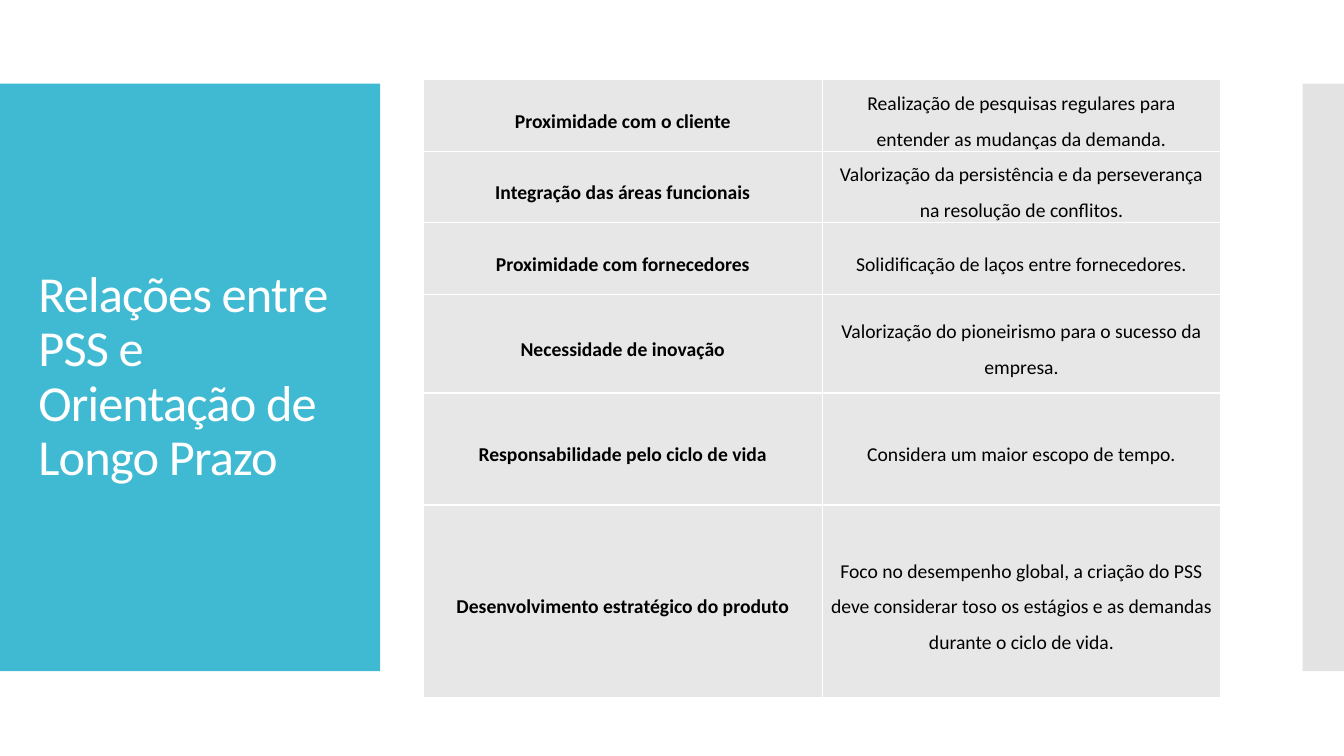
from dataclasses import dataclass

import lxml.etree
import pptx
import pptx.dml.color
import pptx.enum.shapes
import pptx.enum.text
import pptx.oxml.ns
import pptx.slide
import pptx.table
import pptx.text.text
import pptx.util

Inches = pptx.util.Inches
Pt = pptx.util.Pt
ALIGN = pptx.enum.text.PP_ALIGN
MIDDLE = pptx.enum.text.MSO_ANCHOR.MIDDLE

COLORS = {
    "teal": "40BAD2",
    "gray": "C8C8C8",
    "cell": "E7E7E7",
    "white": "FFFFFF",
    "black": "000000",
}
TITLE_FONT = {"name": "Calibri", "size": Pt(36), "bold": False}
CELL_FONT = {"name": "Calibri", "size": Pt(14)}


@dataclass
class Panel:
    left: float
    width: float
    color: str
    opacity: int = 100


@dataclass
class Relation:
    aspect: str
    orientation: str
    height: float


PANELS = [Panel(0, 3.77, "teal"), Panel(12.92, 0.41, "gray", 50)]
RELATIONS = [
    Relation("Proximidade com o cliente",
             "Realização de pesquisas regulares para entender as mudanças da demanda.", 0.61),
    Relation("Integração das áreas funcionais",
             "Valorização da persistência e da perseverança na resolução de conflitos.", 0.61),
    Relation("Proximidade com fornecedores",
             "Solidificação de laços entre fornecedores.", 0.71),
    Relation("Necessidade de inovação",
             "Valorização do pioneirismo para o sucesso da empresa.", 0.98),
    Relation("Responsabilidade pelo ciclo de vida",
             "Considera um maior escopo de tempo.", 1.11),
    Relation("Desenvolvimento estratégico do produto",
             "Foco no desempenho global, a criação do PSS deve considerar toso os "
             "estágios e as demandas durante o ciclo de vida.", 1.91),
]


def rgb(name: str) -> pptx.dml.color.RGBColor:
    return pptx.dml.color.RGBColor.from_string(COLORS[name])


def set_attrs(obj: object, values: dict) -> None:
    for name, value in values.items():
        setattr(obj, name, value)


def add_element(parent: lxml.etree._Element, tag: str, **attrs: str) -> lxml.etree._Element:
    return lxml.etree.SubElement(parent, pptx.oxml.ns.qn(tag), attrs)


def add_text(p: pptx.text.text._Paragraph, text: str, font: dict,
             color: str) -> pptx.text.text._Run:
    r = p.add_run()
    r.text = text
    set_attrs(r.font, font)
    r.font.color.rgb = rgb(color)
    return r


def add_panel(slide: pptx.slide.Slide, panel: Panel) -> None:
    sp = slide.shapes.add_shape(
        pptx.enum.shapes.MSO_SHAPE.RECTANGLE,
        Inches(panel.left), Inches(0.83), Inches(panel.width), Inches(5.83))
    sp.shadow.inherit = False
    sp.fill.solid()
    sp.fill.fore_color.rgb = rgb(panel.color)
    sp.line.fill.background()
    if panel.opacity < 100:
        color = sp.fill._xPr.find(".//" + pptx.oxml.ns.qn("a:srgbClr"))
        add_element(color, "a:alpha", val=str(panel.opacity * 1000))


def place_title(slide: pptx.slide.Slide, text: str) -> None:
    """Format the title placeholder and bring it in front of the panels."""
    sp = slide.shapes.title
    set_attrs(sp, {"left": Inches(0.28), "top": Inches(1.23),
                   "width": Inches(3.22), "height": Inches(5.03)})
    tf = sp.text_frame
    set_attrs(tf, {"word_wrap": True, "vertical_anchor": MIDDLE,
                   "auto_size": pptx.enum.text.MSO_AUTO_SIZE.NONE})
    p = tf.paragraphs[0]
    set_attrs(p, {"alignment": ALIGN.LEFT, "line_spacing": 0.9})
    r = add_text(p, text, TITLE_FONT, "white")
    r.font._element.set("spc", "-60")
    slide.shapes._spTree.append(sp._element)


def add_borders(cell: pptx.table._Cell) -> None:
    """Draw white lines on all sides; they must precede the fill in the XML."""
    props = cell._tc.get_or_add_tcPr()
    for i, side in enumerate("LRTB"):
        ln = add_element(props, f"a:ln{side}", w=str(Pt(1)))
        add_element(add_element(ln, "a:solidFill"), "a:srgbClr", val=COLORS["white"])
        props.insert(i, ln)


def fill_cell(cell: pptx.table._Cell, text: str, bold: bool, inset: float) -> None:
    set_attrs(cell, {"vertical_anchor": MIDDLE,
                     "margin_left": Inches(inset), "margin_right": Inches(inset),
                     "margin_top": 0, "margin_bottom": 0})
    cell.fill.solid()
    cell.fill.fore_color.rgb = rgb("cell")
    add_borders(cell)
    p = cell.text_frame.paragraphs[0]
    set_attrs(p, {"alignment": ALIGN.CENTER, "line_spacing": 1.5})
    add_text(p, text, CELL_FONT | {"bold": bold}, "black")


def add_relations(slide: pptx.slide.Slide, relations: list[Relation]) -> None:
    height = sum(relation.height for relation in relations)
    table = slide.shapes.add_table(
        len(relations), 2, Inches(4.2), Inches(0.79), Inches(7.91), Inches(height)).table
    set_attrs(table, {"first_row": False, "horz_banding": False})
    for i, relation in enumerate(relations):
        table.rows[i].height = Inches(relation.height)
        fill_cell(table.cell(i, 0), relation.aspect, True, 0.06)
        fill_cell(table.cell(i, 1), relation.orientation, False, 0.07)


def main() -> None:
    prs = pptx.Presentation()
    set_attrs(prs, {"slide_width": Inches(13.33), "slide_height": Inches(7.5)})
    slide = prs.slides.add_slide(prs.slide_layouts.get_by_name("Title Only"))
    for panel in PANELS:
        add_panel(slide, panel)
    place_title(slide, "Relações entre PSS e Orientação de Longo Prazo")
    add_relations(slide, RELATIONS)
    prs.save("out.pptx")


if __name__ == "__main__":
    main()
